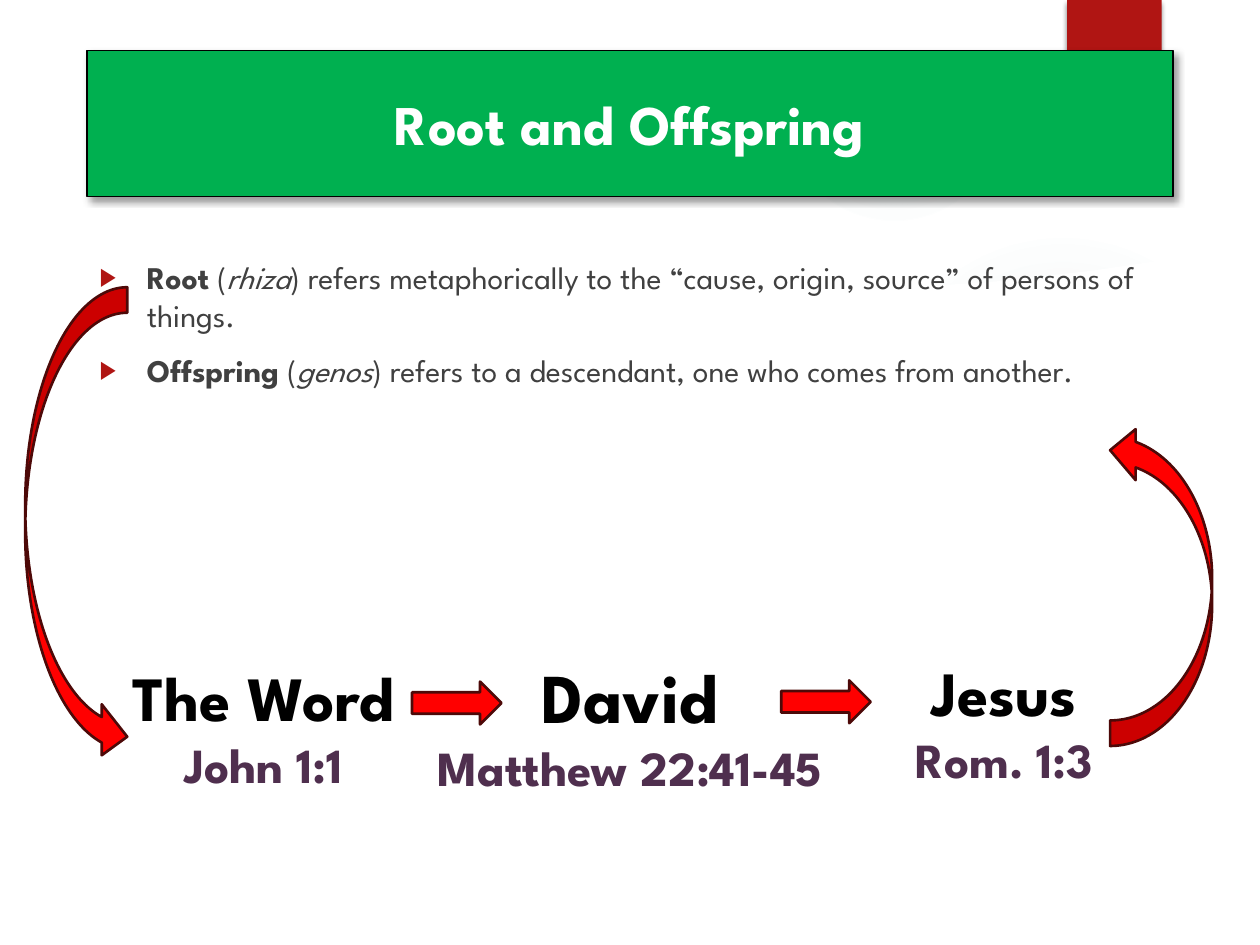
from typing import NamedTuple

from lxml.etree import SubElement
from pptx import Presentation
from pptx.dml.color import RGBColor
from pptx.enum.shapes import MSO_SHAPE
from pptx.enum.text import MSO_ANCHOR, MSO_AUTO_SIZE, PP_ALIGN
from pptx.oxml.ns import qn
from pptx.util import Inches, Pt

FONT = "League Spartan"
WHITE = RGBColor(0xFF, 0xFF, 0xFF)
BLACK = RGBColor(0x00, 0x00, 0x00)
GREEN = RGBColor(0x00, 0xB0, 0x50)
CRIMSON = RGBColor(0xB0, 0x15, 0x13)
RED = RGBColor(0xFF, 0x00, 0x00)
DARK_RED = RGBColor(0x4D, 0x09, 0x08)
PLUM = RGBColor(0x4F, 0x2F, 0x4E)
GRAY = RGBColor(0x40, 0x40, 0x40)
TEAL = RGBColor(0x5F, 0x9C, 0x9D)
INDENT = Pt(27)


class Glow(NamedTuple):
    left: float
    top: float
    size: float
    center_alpha: int
    middle_alpha: int
    edge: int


class Definition(NamedTuple):
    term: str
    greek: str
    meaning: str


class Figure(NamedTuple):
    name: str
    verse: str
    left: float
    top: float
    height: float
    size: int


class Arrow(NamedTuple):
    kind: MSO_SHAPE
    left: float
    top: float
    width: float
    height: float
    rotation: int = 0


GLOWS = [
    Glow(0, 3.17, 2.58, 8, 8, 72),
    Glow(6.89, 1.83, 3.08, 7, 6, 69),
    Glow(6.22, 0, 1.75, 14, 7, 73),
    Glow(0, 2.92, 4.58, 11, 10, 75),
    Glow(6.89, 6.42, 1.08, 14, 7, 66),
]
SWOOSH = [(6.99, 2.34), (7.6, 2.33), (8.6, 2.23), (9.56, 2.08), (9.51, 1.74), (9.01, 1.9),
          (8.5, 2.03), (8.01, 2.13), (7.47, 2.23), (6.96, 2.29)]
PANEL = [(0.53, 2.03), (0.53, 6.99), (9.47, 6.99), (9.47, 2.03), (8.66, 2.15), (7.85, 2.24),
         (7.04, 2.29), (6.25, 2.33), (5.48, 2.34), (4.39, 2.34), (3.38, 2.3), (2.49, 2.24),
         (1.73, 2.17), (0.99, 2.09)]
FRAME_OUTER = [(0, 0), (0, 7.5), (10, 7.5), (10, 0)]
FRAME_INNER = [(9.45, 6.95), (0.56, 6.95), (0.56, 0.56), (9.45, 0.56)]
DEFINITIONS = [
    Definition("Root", "rhiza", "refers metaphorically to the “cause, origin, source” of persons of things."),
    Definition("Offspring", "genos", "refers to a descendant, one who comes from another."),
]
FIGURES = [
    Figure("David", "Matthew 22:41-45", 3.27, 5.14, 1.25, 40),
    Figure("The Word", "John 1:1", 0.36, 5.18, 1.18, 36),
    Figure("Jesus", "Rom. 1:3", 6.24, 5.14, 1.18, 36),
]
ARROWS = [
    Arrow(MSO_SHAPE.CURVED_RIGHT_ARROW, 0.2, 2.28, 0.81, 3.77),
    Arrow(MSO_SHAPE.RIGHT_ARROW, 3.27, 5.41, 0.71, 0.34),
    Arrow(MSO_SHAPE.RIGHT_ARROW, 6.2, 5.4, 0.71, 0.34),
    Arrow(MSO_SHAPE.CURVED_RIGHT_ARROW, 8.81, 3.37, 0.81, 2.55, 180),
]


def place(sp, left: float, top: float, width: float, height: float) -> None:
    sp.left, sp.top = Inches(left), Inches(top)
    sp.width, sp.height = Inches(width), Inches(height)


def add_color(parent, color: RGBColor, opacity: int) -> None:
    clr = SubElement(parent, qn("a:srgbClr"), val=str(color))
    SubElement(clr, qn("a:alpha"), val=str(opacity * 1000))


def add_run(p, text: str, size: int, color: RGBColor, bold: bool = False, italic: bool = False) -> None:
    r = p.add_run()
    r.text = text
    r.font.name, r.font.size = FONT, Pt(size)
    r.font.bold, r.font.italic = bold, italic
    r.font.color.rgb = color


def add_shadow(sp, opacity: int, blur: int, distance: int, angle: int) -> None:
    effects = SubElement(sp._element.spPr, qn("a:effectLst"))
    shadow = SubElement(effects, qn("a:outerShdw"), blurRad=str(Pt(blur)), dist=str(Pt(distance)),
                        dir=str(angle * 60000), algn="tl", rotWithShape="0")
    add_color(shadow, BLACK, opacity)


def add_bullet(p) -> None:
    pPr = p._p.get_or_add_pPr()
    pPr.set("marL", str(INDENT))
    pPr.set("indent", str(-INDENT))
    SubElement(SubElement(pPr, qn("a:buClr")), qn("a:srgbClr"), val=str(CRIMSON))
    SubElement(pPr, qn("a:buSzPct"), val="80000")
    SubElement(pPr, qn("a:buFont"), typeface="Arial")
    SubElement(pPr, qn("a:buChar"), char="▶")


def send_behind_title(slide, sp) -> None:
    slide.shapes.title._element.addprevious(sp._element)


def add_glow(slide, glow: Glow) -> None:
    sp = slide.shapes.add_shape(MSO_SHAPE.OVAL, Inches(glow.left), Inches(glow.top),
                                Inches(glow.size), Inches(glow.size))
    grad = SubElement(sp._element.spPr, qn("a:gradFill"))
    stops = SubElement(grad, qn("a:gsLst"))
    for position, opacity in ((0, glow.center_alpha), (36, glow.middle_alpha), (glow.edge, 0)):
        add_color(SubElement(stops, qn("a:gs"), pos=str(position * 1000)), TEAL, opacity)
    radial = SubElement(grad, qn("a:path"), path="circle")
    SubElement(radial, qn("a:fillToRect"), l="50000", t="50000", r="50000", b="50000")
    sp.line.fill.background()
    sp.shadow.inherit = False
    send_behind_title(slide, sp)


def add_white_outline(slide, *contours: list[tuple[float, float]]):
    """Draw a white shape from closed contours given in inches."""
    outlines = [[(x * 100, y * 100) for x, y in contour] for contour in contours]
    builder = slide.shapes.build_freeform(*outlines[0][0], scale=Inches(0.01))
    for i, points in enumerate(outlines):
        if i:
            builder.move_to(*points[0])
        builder.add_line_segments(points[1:], close=True)
    sp = builder.convert_to_shape()
    sp.fill.solid()
    sp.fill.fore_color.rgb = WHITE
    sp.line.fill.background()
    sp.shadow.inherit = False
    send_behind_title(slide, sp)
    return sp


def add_background(slide) -> None:
    for glow in GLOWS:
        add_glow(slide, glow)
    swoosh = add_white_outline(slide, SWOOSH)
    swoosh.rotation = 350.2
    color = swoosh._element.spPr.find(qn("a:solidFill"))[0]
    SubElement(color, qn("a:alpha"), val="20000")
    add_white_outline(slide, PANEL)
    add_white_outline(slide, FRAME_OUTER, FRAME_INNER)
    tab = slide.shapes.add_shape(MSO_SHAPE.RECTANGLE, Inches(8.47), 0, Inches(0.75), Inches(1.2))
    tab.fill.solid()
    tab.fill.fore_color.rgb = CRIMSON
    tab.line.fill.background()
    add_shadow(tab, 45, 3, 2, 90)
    send_behind_title(slide, tab)


def add_title(slide) -> None:
    title = slide.shapes.title
    place(title, 0.69, 0.4, 8.62, 1.16)
    title.fill.solid()
    title.fill.fore_color.rgb = GREEN
    title.line.color.rgb = BLACK
    title.line.width = Pt(0.75)
    add_shadow(title, 40, 4, 3, 45)
    tf = title.text_frame
    tf.vertical_anchor = MSO_ANCHOR.MIDDLE
    tf.auto_size = MSO_AUTO_SIZE.NONE
    p = tf.paragraphs[0]
    p.alignment = PP_ALIGN.CENTER
    add_run(p, "Root and Offspring", 32, WHITE, bold=True)


def add_definitions(slide) -> None:
    body = slide.placeholders[1]
    place(body, 0.69, 2, 8.62, 2.1)
    tf = body.text_frame
    tf.auto_size = MSO_AUTO_SIZE.NONE
    for i, item in enumerate(DEFINITIONS):
        p = tf.add_paragraph() if i else tf.paragraphs[0]
        add_bullet(p)
        p.space_before = Pt(10 if i else 0)
        add_run(p, item.term, 18, GRAY, bold=True)
        add_run(p, " (", 18, GRAY)
        add_run(p, item.greek, 18, GRAY, italic=True)
        add_run(p, f") {item.meaning}", 18, GRAY)


def add_figure(slide, figure: Figure) -> None:
    box = slide.shapes.add_textbox(Inches(figure.left), Inches(figure.top), Inches(3.46), Inches(figure.height))
    tf = box.text_frame
    tf.word_wrap = True
    tf.auto_size = MSO_AUTO_SIZE.SHAPE_TO_FIT_TEXT
    name, verse = tf.paragraphs[0], tf.add_paragraph()
    name.alignment = verse.alignment = PP_ALIGN.CENTER
    add_run(name, figure.name, figure.size, BLACK, bold=True)
    add_run(verse, figure.verse, 28, PLUM, bold=True)


def add_arrow(slide, arrow: Arrow) -> None:
    sp = slide.shapes.add_shape(arrow.kind, Inches(arrow.left), Inches(arrow.top),
                                Inches(arrow.width), Inches(arrow.height))
    sp.rotation = arrow.rotation
    sp.shadow.inherit = False
    sp.fill.solid()
    sp.fill.fore_color.rgb = RED
    sp.line.color.rgb = DARK_RED
    sp.line.width = Pt(1.5)


# Background first, so that the title and the body lie above it.
prs = Presentation()
prs.slide_width, prs.slide_height = Inches(10), Inches(7.5)
slide = prs.slides.add_slide(prs.slide_layouts[1])
add_background(slide)
add_title(slide)
add_definitions(slide)
for figure in FIGURES:
    add_figure(slide, figure)
for arrow in ARROWS:
    add_arrow(slide, arrow)
prs.save("out.pptx")
